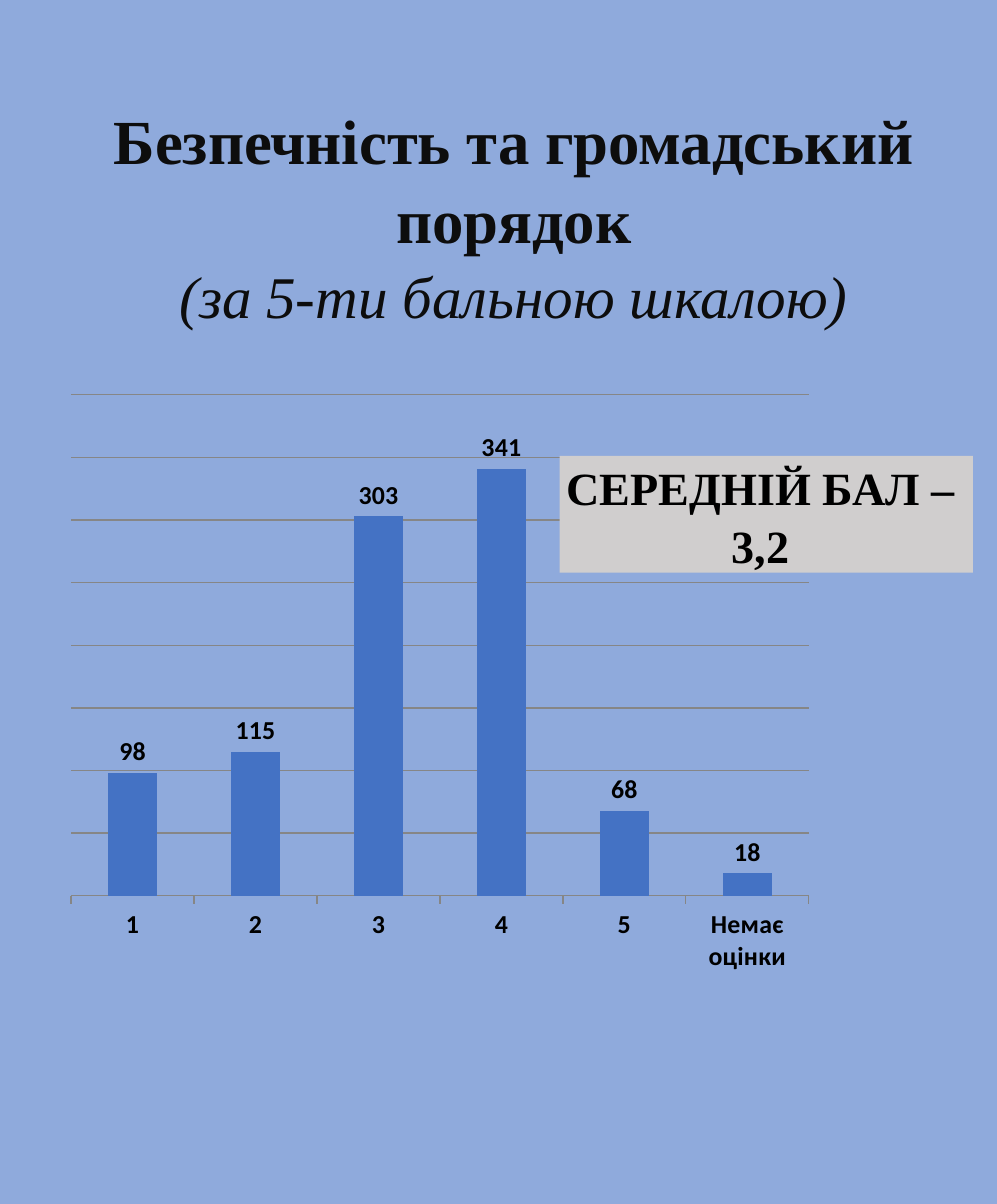
from pptx import Presentation
from pptx.chart.data import CategoryChartData
from pptx.dml.color import RGBColor
from pptx.enum.chart import XL_CHART_TYPE, XL_LABEL_POSITION, XL_TICK_MARK
from pptx.enum.shapes import MSO_SHAPE
from pptx.enum.text import MSO_ANCHOR, MSO_AUTO_SIZE, PP_ALIGN
from pptx.util import Inches, Pt

TITLE = [
    ("Безпечність та громадський порядок", dict(size=34, color="0D0D0D", bold=True)),
    ("(за 5-ти бальною шкалою)", dict(size=32, color="0D0D0D", bold=False, italic=True)),
]
AVERAGE = [(line, dict(size=25, color="000000", bold=True))
           for line in ("СЕРЕДНІЙ БАЛ – ", "3,2 ")]
VOTES = {"1": 98, "2": 115, "3": 303, "4": 341, "5": 68, "Немає оцінки": 18}

WIDTH, HEIGHT = 7.5, 9.06
LEFT = 0.42
TITLE_BOX = (LEFT, 0.75, 6.89, 1.73)
CHART_BOX = (LEFT, 2.88, 5.78, 4.53)
AVERAGE_BOX = (4.21, 3.43, 3.11, 0.88)


def rgb(value):
    return RGBColor.from_string(value)


def inches(box):
    return [Inches(v) for v in box]


def set_font(font, size, color, name="Times New Roman", **styles):
    values = dict(styles, size=Pt(size), name=name)
    for key, value in values.items():
        setattr(font, key, value)
    font.color.rgb = rgb(color)


def write_lines(shape, lines):
    """Fill the shape with centred paragraphs, one per line."""
    tf = shape.text_frame
    frame = dict(word_wrap=True, auto_size=MSO_AUTO_SIZE.NONE,
                 vertical_anchor=MSO_ANCHOR.MIDDLE,
                 margin_left=Inches(0.04), margin_right=Inches(0.04),
                 margin_top=Inches(0.02), margin_bottom=Inches(0.02))
    for key, value in frame.items():
        setattr(tf, key, value)
    for i, (text, style) in enumerate(lines):
        p = tf.add_paragraph() if i else tf.paragraphs[0]
        p.alignment = PP_ALIGN.CENTER
        p.line_spacing = 1.05
        p.space_before = Pt(0)
        r = p.add_run()
        r.text = text
        set_font(r.font, **style)


def add_votes_chart(s):
    data = CategoryChartData()
    data.categories = list(VOTES)
    data.add_series("Series 1", list(VOTES.values()))
    chart = s.shapes.add_chart(XL_CHART_TYPE.COLUMN_CLUSTERED,
                               *inches(CHART_BOX), data).chart
    chart.has_legend = chart.has_title = False
    set_font(chart.font, 10, "000000", "Calibri")

    plot = chart.plots[0]
    plot.gap_width = 150
    plot.vary_by_categories = False
    fill = plot.series[0].format.fill
    fill.solid()
    fill.fore_color.rgb = rgb("4472C4")
    plot.has_data_labels = True
    labels = plot.data_labels
    labels.show_value = True
    labels.position = XL_LABEL_POSITION.OUTSIDE_END

    grades, counts = chart.category_axis, chart.value_axis
    grades.major_tick_mark = XL_TICK_MARK.OUTSIDE
    counts.minimum_scale, counts.maximum_scale, counts.major_unit = 0, 400, 50
    counts.has_major_gridlines = True
    counts.visible = False
    for line in (grades.format.line, counts.major_gridlines.format.line):
        line.color.rgb = rgb("868686")
        line.width = Pt(0.75)
    for part in (labels, grades.tick_labels):
        set_font(part.font, 14, "000000", "Calibri", bold=True)


def main():
    prs = Presentation()
    prs.slide_width, prs.slide_height = Inches(WIDTH), Inches(HEIGHT)
    s = prs.slides.add_slide(prs.slide_layouts[5])
    s.background.fill.solid()
    s.background.fill.fore_color.rgb = rgb("8FAADC")

    title = s.shapes.title
    title.left, title.top, title.width, title.height = inches(TITLE_BOX)
    write_lines(title, TITLE)

    add_votes_chart(s)

    sp = s.shapes.add_shape(MSO_SHAPE.RECTANGLE, *inches(AVERAGE_BOX))
    sp.shadow.inherit = False
    sp.fill.solid()
    sp.fill.fore_color.rgb = rgb("D0CECE")
    sp.line.fill.background()
    write_lines(sp, AVERAGE)

    prs.save("out.pptx")


if __name__ == "__main__":
    main()
